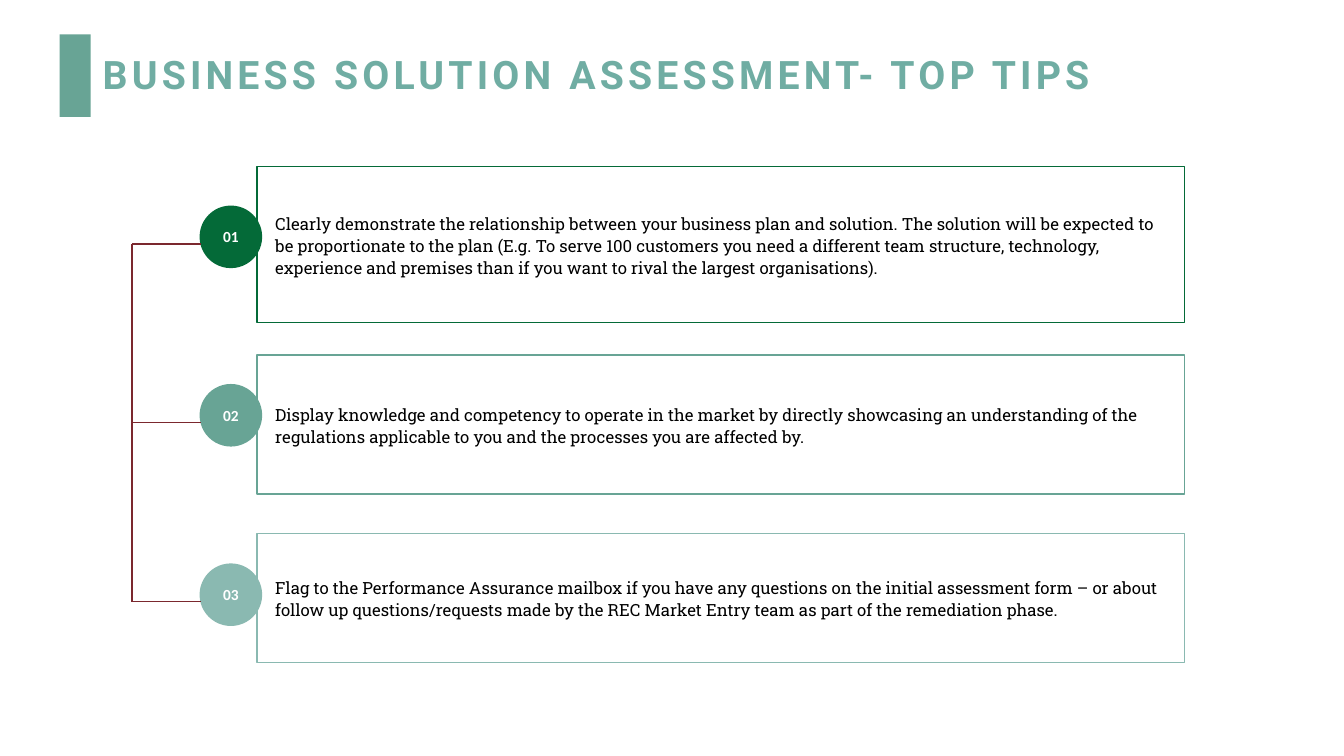
from lxml import etree
from pptx import Presentation
from pptx.dml.color import RGBColor
from pptx.enum.shapes import MSO_CONNECTOR, MSO_SHAPE
from pptx.enum.text import MSO_ANCHOR, PP_ALIGN
from pptx.oxml.ns import qn
from pptx.util import Inches, Pt

RECTANGLE, OVAL = MSO_SHAPE.RECTANGLE, MSO_SHAPE.OVAL
STRAIGHT = MSO_CONNECTOR.STRAIGHT
MIDDLE = MSO_ANCHOR.MIDDLE
LEFT, CENTER = PP_ALIGN.LEFT, PP_ALIGN.CENTER

WHITE = RGBColor(0xFF, 0xFF, 0xFF)
BLACK = RGBColor(0x00, 0x00, 0x00)
TITLE_TEAL = RGBColor(0x70, 0xAD, 0xA3)
DARK_GREEN = RGBColor(0x04, 0x6A, 0x38)
TEAL = RGBColor(0x68, 0xA4, 0x95)
PALE_TEAL = RGBColor(0x8A, 0xB9, 0xB1)
MAROON = RGBColor(0x7B, 0x28, 0x2E)

COLUMNS, ROWS = 133.3, 75  # grid cells are a tenth of an inch
CELL = Inches(0.1)

CARD_LEFT, CARD_WIDTH = 25.5, 92
BADGE_LEFT, BADGE_SIZE = 19.9, 6
TRUNK_LEFT = 13.1
BRANCH_DROP = 3.7  # from the top of a badge to its branch line

# card top row, card rows, badge top row, colour, text
TIPS = [
    (16.5, 15.5, 20.5, DARK_GREEN,
     "Clearly demonstrate the relationship between your business plan and solution. "
     "The solution will be expected to be proportionate to the plan (E.g. To serve 100 "
     "customers you need a different team structure, technology, experience and premises "
     "than if you want to rival the largest organisations)."),
    (35.2, 13.8, 38.2, TEAL,
     "Display knowledge and competency to operate in the market by directly showcasing "
     "an understanding of the regulations applicable to you and the processes you are "
     "affected by."),
    (52.9, 12.8, 56, PALE_TEAL,
     "Flag to the Performance Assurance mailbox if you have any questions on the initial "
     "assessment form – or about follow up questions/requests made by the REC Market "
     "Entry team as part of the remediation phase."),
]


def grid(*cells):
    return [round(cell * CELL) for cell in cells]


def add_box(slide, kind, box, fill=None, line=None, line_width=1):
    shape = slide.shapes.add_shape(kind, *grid(*box))
    shape.shadow.inherit = False
    if fill is None:
        shape.fill.background()
    else:
        shape.fill.solid()
        shape.fill.fore_color.rgb = fill
    if line is None:
        shape.line.fill.background()
    else:
        shape.line.color.rgb = line
        shape.line.width = Pt(line_width)
    return shape


def write(shape, text, font_name, size, color, bold=False, align=LEFT,
          spacing=1.0, insets=(0, 0, 0, 0)):
    """Set one middle-anchored paragraph; insets are left, top, right, bottom cells."""
    frame = shape.text_frame
    frame.word_wrap = True
    frame.vertical_anchor = MIDDLE
    (frame.margin_left, frame.margin_top,
     frame.margin_right, frame.margin_bottom) = grid(*insets)
    frame.text = text
    paragraph = frame.paragraphs[0]
    paragraph.alignment = align
    paragraph.line_spacing = spacing
    run = paragraph.runs[0]
    run.font.name = font_name
    run.font.size = Pt(size)
    run.font.bold = bold
    run.font.color.rgb = color
    return run


def add_title(slide, left, top, width, height):
    """Place the accent bar and the letter-spaced heading beside it."""
    bar_width = 3.1
    add_box(slide, RECTANGLE, (left, top, bar_width, height), fill=TEAL)
    heading = slide.shapes.add_textbox(
        *grid(left + bar_width + 0.2, top + 0.6, width - bar_width - 0.2, height - 1))
    run = write(heading, "BUSINESS SOLUTION ASSESSMENT- TOP TIPS", "Roboto", 28,
                TITLE_TEAL, bold=True, spacing=0.9, insets=(1, 0.5, 1, 0.5))
    run.font._element.set("spc", "300")


def add_tip(slide, number, top, height, badge_top, color, text):
    """Place an outlined card with its numbered badge on the left edge."""
    card = add_box(slide, RECTANGLE, (CARD_LEFT, top, CARD_WIDTH, height), line=color)
    write(card, text, "Roboto Slab", 12, BLACK, spacing=1.1,
          insets=(1.8, 0.6, 0.8, 0.6))
    badge = add_box(slide, OVAL, (BADGE_LEFT, badge_top, BADGE_SIZE, BADGE_SIZE),
                    fill=color, line=color, line_width=1.5)
    write(badge, f"{number:02d}", "Calibri", 11, WHITE, bold=True, align=CENTER)


def add_line(slide, *ends):
    connector = slide.shapes.add_connector(STRAIGHT, *grid(*ends))
    connector.line.color.rgb = MAROON
    connector.line.width = Pt(1)
    etree.SubElement(connector._element.spPr, qn("a:effectLst"))


def add_bracket(slide, left, right, rows):
    """Join the branch rows with a vertical trunk."""
    add_line(slide, left, rows[0], left, rows[-1])
    for row in rows:
        add_line(slide, left, row, right, row)


def main():
    presentation = Presentation()
    presentation.slide_width, presentation.slide_height = grid(COLUMNS, ROWS)
    slide = presentation.slides.add_slide(presentation.slide_layouts[6])
    add_title(slide, 5.9, 3.4, 104.8, 8.2)
    for number, tip in reversed(list(enumerate(TIPS, start=1))):
        add_tip(slide, number, *tip)
    add_bracket(slide, TRUNK_LEFT, BADGE_LEFT, [tip[2] + BRANCH_DROP for tip in TIPS])
    presentation.save("out.pptx")


if __name__ == "__main__":
    main()
